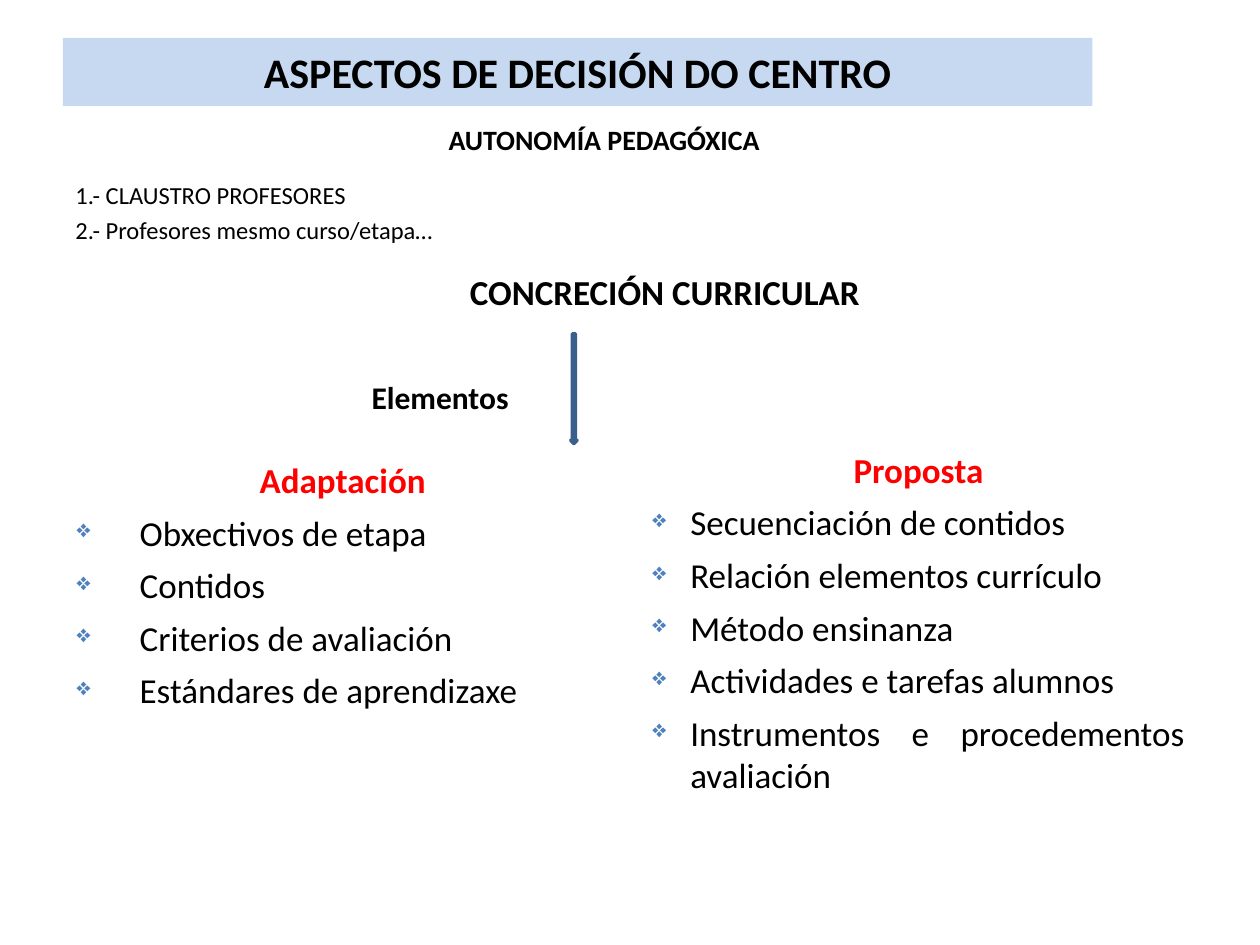
from lxml.etree import SubElement
from pptx import Presentation
from pptx.dml.color import RGBColor
from pptx.enum.shapes import MSO_SHAPE
from pptx.enum.text import MSO_ANCHOR, PP_ALIGN
from pptx.oxml.ns import qn
from pptx.util import Inches, Pt

FONT = "Calibri"
BLACK = RGBColor(0x00, 0x00, 0x00)
RED = RGBColor(0xFF, 0x00, 0x00)
PALE = RGBColor(0xC6, 0xD9, 0xF1)
BLUE = RGBColor(0x4F, 0x81, 0xBD)
NAVY = RGBColor(0x3A, 0x5F, 0x8C)

ADAPT = ["Obxectivos de etapa", "Contidos", "Criterios de avaliación",
         "Estándares de aprendizaxe"]
PLAN = ["Secuenciación de contidos", "Relación elementos currículo",
        "Método ensinanza", "Actividades e tarefas alumnos",
        "Instrumentos e procedementos avaliación"]


def add_box(slide, left, top, width, height):
    """Add a wrapping text box and return its text frame."""
    box = slide.shapes.add_textbox(
        Inches(left), Inches(top), Inches(width), Inches(height))
    box.text_frame.word_wrap = True
    return box.text_frame


def add_line(frame, text, size, bold=False, color=BLACK,
             align=PP_ALIGN.LEFT, before=0, indent=0):
    """Write one paragraph, using the empty first one if it is free."""
    para = frame.paragraphs[0]
    if para.runs:
        para = frame.add_paragraph()
    para.alignment = align
    para.space_before = Pt(before)
    para._p.get_or_add_pPr().set("marL", str(Inches(indent)))
    run = para.add_run()
    run.text = text
    font = run.font
    font.name, font.size, font.bold = FONT, Pt(size), bold
    font.color.rgb = color
    return para


def add_bullet(para, hang):
    """Give a paragraph a blue diamond bullet and a hanging indent."""
    props = para._p.get_or_add_pPr()
    props.set("indent", str(-Inches(hang)))
    tint = SubElement(props, qn("a:buClr"))
    SubElement(tint, qn("a:srgbClr")).set("val", str(BLUE))
    SubElement(props, qn("a:buSzPct")).set("val", "70000")
    SubElement(props, qn("a:buChar")).set("char", "❖")


def add_list(slide, left, top, height, head, items, hang, align):
    """Add a red heading with a bulleted list below it."""
    frame = add_box(slide, left, top, 4.42, height)
    add_line(frame, head, 20, True, RED, PP_ALIGN.CENTER)
    for item in items:
        para = add_line(frame, item, 20, align=align, before=6, indent=hang)
        add_bullet(para, hang)


def add_form(slide, kind, left, top, width, height, fill):
    """Add a filled preset shape without line or shadow."""
    form = slide.shapes.add_shape(
        kind, Inches(left), Inches(top), Inches(width), Inches(height))
    form.shadow.inherit = False
    form.fill.solid()
    form.fill.fore_color.rgb = fill
    form.line.fill.background()
    return form


def add_title(slide):
    """Add the title band."""
    band = add_form(slide, MSO_SHAPE.RECTANGLE, 0.5, 0.3, 8.17, 0.54, PALE)
    frame = band.text_frame
    frame.word_wrap = True
    frame.vertical_anchor = MSO_ANCHOR.MIDDLE
    add_line(frame, "ASPECTOS DE DECISIÓN DO CENTRO", 24, True,
             align=PP_ALIGN.CENTER)


def add_body(slide):
    """Add the text between the title and the two lists."""
    frame = add_box(slide, 0.5, 0.92, 8.59, 2.6)
    add_line(frame, "AUTONOMÍA PEDAGÓXICA", 16, True, align=PP_ALIGN.CENTER)
    add_line(frame, "1.- CLAUSTRO PROFESORES", 14, before=14)
    add_line(frame, "2.- Profesores mesmo curso/etapa…", 14, before=2.8)
    add_line(frame, "CONCRECIÓN CURRICULAR", 20, True, before=15.4, indent=3.13)
    add_line(frame, "Elementos", 18, True, before=37, indent=2.35)


def add_arrow(slide):
    """Add the arrow that leads down to the lists."""
    arrow = add_form(slide, MSO_SHAPE.DOWN_ARROW, 4.53, 2.65, 0.05, 0.87, BLUE)
    arrow.line.color.rgb = NAVY
    arrow.line.width = Pt(2)


def main():
    """Build the slide and save it."""
    deck = Presentation()
    deck.slide_width, deck.slide_height = Inches(10), Inches(7.5)
    slide = deck.slides.add_slide(deck.slide_layouts[6])
    add_title(slide)
    add_body(slide)
    add_arrow(slide)
    add_list(slide, 0.51, 3.59, 2.83, "Adaptación", ADAPT, 0.5, PP_ALIGN.LEFT)
    add_list(slide, 5.08, 3.51, 3.15, "Proposta", PLAN, 0.3, PP_ALIGN.JUSTIFY)
    deck.save("out.pptx")


if __name__ == "__main__":
    main()
